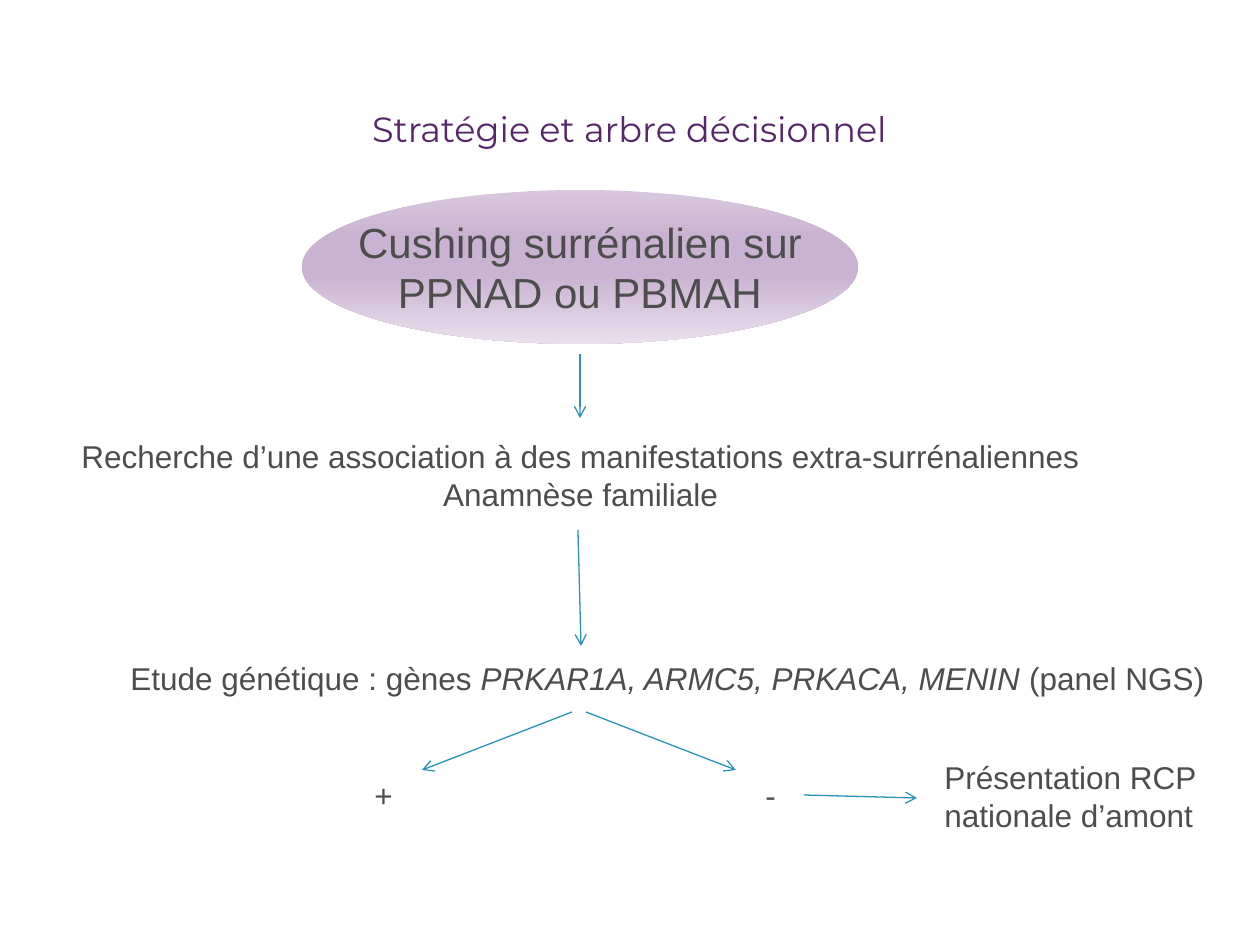
from lxml.etree import SubElement as Sub
from pptx import Presentation as Deck
from pptx.dml.color import RGBColor as RGB
from pptx.enum.shapes import MSO_CONNECTOR as LINK, MSO_SHAPE as FORM
from pptx.enum.text import MSO_ANCHOR as ANCHOR, MSO_AUTO_SIZE as AUTO, PP_ALIGN as ALIGN
from pptx.oxml.ns import qn
from pptx.util import Emu, Pt

SCALE = 914400 / 126
PLUM = RGB(0x56, 0x28, 0x67)
GREY = RGB(0x4D, 0x4D, 0x4D)
TEAL = RGB(0x29, 0x93, 0xB7)
STOPS = [
    (0, RGB(0xD8, 0xC8, 0xDE)),
    (30, RGB(0xCA, 0xB3, 0xD2)),
    (55, RGB(0xCA, 0xB3, 0xD2)),
    (100, RGB(0xEA, 0xE0, 0xED)),
]
HEAD = {"name": "Montserrat", "size": Pt(20), "bold": False}
LEAD = {"name": "Arial", "size": Pt(24)}
BODY = {"name": "Arial", "size": Pt(18)}

TEXTS = [
    ((64, 431, 1033, 89), ["Recherche d’une association à des manifestations extra-surrénaliennes",
                           "Anamnèse familiale"], ALIGN.CENTER, False),
    ((118, 653, 1109, 50), [["Etude génétique : gènes ", "PRKAR1A, ARMC5, PRKACA, MENIN ",
                             "(panel NGS)"]], ALIGN.LEFT, False),
    ((362, 770, 44, 50), ["+"], ALIGN.LEFT, False),
    ((753, 770, 37, 50), ["-"], ALIGN.LEFT, False),
    ((932, 752, 297, 89), ["Présentation RCP nationale d’amont"], ALIGN.LEFT, True),
]
ARROWS = [
    (580, 354, 580, 418),
    (578, 530, 581, 646),
    (572, 712, 422, 770),
    (586, 712, 736, 770),
    (804, 795, 917, 798),
]


def px(*nums):
    return [Emu(round(n * SCALE)) for n in nums]


def write(frame, lines, style, color, align, wrap):
    frame.word_wrap = wrap
    for i, line in enumerate(lines):
        para = frame.add_paragraph() if i else frame.paragraphs[0]
        para.alignment = align
        parts = [line] if isinstance(line, str) else line
        for j, part in enumerate(parts):
            run = para.add_run()
            run.text = part
            for key, value in style.items():
                setattr(run.font, key, value)
            run.font.italic = j % 2 == 1
            run.font.color.rgb = color


def add_title(slide, box, text):
    title = slide.shapes.title
    title.left, title.top, title.width, title.height = px(*box)
    frame = title.text_frame
    frame.auto_size = AUTO.NONE
    frame.vertical_anchor = ANCHOR.TOP
    write(frame, [text], HEAD, PLUM, ALIGN.CENTER, True)


def add_oval(slide, box, lines):
    oval = slide.shapes.add_shape(FORM.OVAL, *px(*box))
    oval.shadow.inherit = False
    oval.line.fill.background()
    oval.fill.gradient()
    oval.fill.gradient_angle = 270
    stops = oval.fill._fill._gradFill.find(qn("a:gsLst"))
    for stop in list(stops):
        stops.remove(stop)
    for pos, color in STOPS:
        stop = Sub(stops, qn("a:gs"), pos=str(pos * 1000))
        Sub(stop, qn("a:srgbClr"), val=str(color))
    oval.text_frame.vertical_anchor = ANCHOR.MIDDLE
    write(oval.text_frame, lines, LEAD, GREY, ALIGN.CENTER, False)


def add_text(slide, box, lines, align, wrap):
    frame = slide.shapes.add_textbox(*px(*box)).text_frame
    frame.auto_size = AUTO.SHAPE_TO_FIT_TEXT
    write(frame, lines, BODY, GREY, align, wrap)


def add_arrow(slide, ends):
    arrow = slide.shapes.add_connector(LINK.STRAIGHT, *px(*ends))
    arrow.line.color.rgb = TEAL
    arrow.line.width = Pt(0.75)
    Sub(arrow.line._get_or_add_ln(), qn("a:tailEnd"), type="arrow")
    Sub(arrow._element.spPr, qn("a:effectLst"))


def main():
    deck = Deck()
    deck.slide_width, deck.slide_height = px(1260, 945)
    slide = deck.slides.add_slide(deck.slide_layouts[5])
    add_title(slide, (233, 101, 793, 79), "Stratégie et arbre décisionnel")
    add_oval(slide, (302, 190, 556, 154), ["Cushing surrénalien sur", "PPNAD ou PBMAH"])
    for item in TEXTS:
        add_text(slide, *item)
    for ends in ARROWS:
        add_arrow(slide, ends)
    deck.save("out.pptx")


if __name__ == "__main__":
    main()
